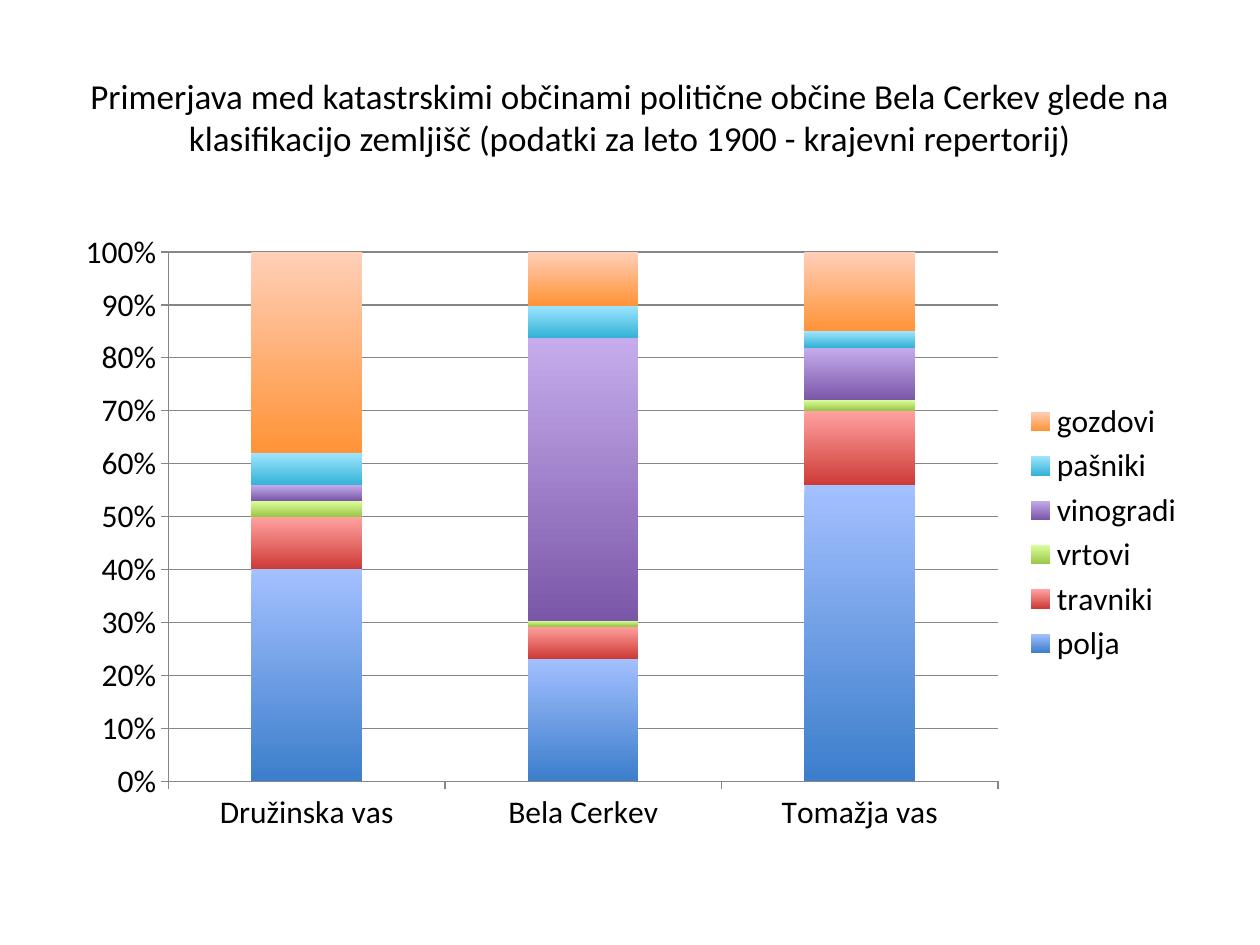
from pptx import Presentation
from pptx.chart.data import CategoryChartData
from pptx.dml.color import RGBColor
from pptx.enum.chart import XL_CHART_TYPE, XL_LEGEND_POSITION, XL_TICK_MARK
from pptx.enum.text import MSO_ANCHOR, PP_ALIGN
from pptx.util import Inches, Pt

STACKED = XL_CHART_TYPE.COLUMN_STACKED_100
LEGEND_RIGHT = XL_LEGEND_POSITION.RIGHT
TICK_OUTSIDE = XL_TICK_MARK.OUTSIDE
TICK_NONE = XL_TICK_MARK.NONE
MIDDLE = MSO_ANCHOR.MIDDLE
CENTER = PP_ALIGN.CENTER

FONT = "Calibri"
BLACK = RGBColor(0x00, 0x00, 0x00)
GRAY = RGBColor(0x86, 0x86, 0x86)

TITLE = ("Primerjava med katastrskimi občinami politične občine Bela Cerkev glede na "
         "klasifikacijo zemljišč (podatki za leto 1900 - krajevni repertorij)")
VILLAGES = ["Družinska vas", "Bela Cerkev", "Tomažja vas"]

# Land use: name, shares by village, top and bottom gradient colours
LAND_USES = [
    ("polja", (40, 23, 56), RGBColor(0xA3, 0xC0, 0xFF), RGBColor(0x3C, 0x7E, 0xCB)),
    ("travniki", (10, 6, 14), RGBColor(0xFF, 0xA2, 0xA0), RGBColor(0xCE, 0x3B, 0x37)),
    ("vrtovi", (3, 1, 2), RGBColor(0xDB, 0xFF, 0x9C), RGBColor(0x9B, 0xC7, 0x48)),
    ("vinogradi", (3, 53, 10), RGBColor(0xC6, 0xAC, 0xED), RGBColor(0x7B, 0x57, 0xA8)),
    ("pašniki", (6, 6, 3), RGBColor(0x9F, 0xE5, 0xFF), RGBColor(0x34, 0xB3, 0xD6)),
    ("gozdovi", (38, 10, 15), RGBColor(0xFF, 0xCF, 0xB8), RGBColor(0xFF, 0x93, 0x37)),
]


def style_font(font, size):
    font.name = FONT
    font.size = Pt(size)
    font.color.rgb = BLACK


def add_title(slide, left, top, width, height):
    text_frame = slide.shapes.add_textbox(left, top, width, height).text_frame
    text_frame.word_wrap = True
    text_frame.vertical_anchor = MIDDLE
    paragraph = text_frame.paragraphs[0]
    paragraph.alignment = CENTER
    run = paragraph.add_run()
    run.text = TITLE
    style_font(run.font, 20)


def style_axis(axis):
    axis.major_tick_mark = TICK_OUTSIDE
    axis.minor_tick_mark = TICK_NONE
    axis.format.line.color.rgb = GRAY
    style_font(axis.tick_labels.font, 18)


def add_land_use_chart(slide, left, top, width, height):
    chart_data = CategoryChartData()
    chart_data.categories = VILLAGES
    for name, shares, _, _ in LAND_USES:
        chart_data.add_series(name, shares)
    chart = slide.shapes.add_chart(STACKED, left, top, width, height, chart_data).chart
    chart.has_title = False
    style_font(chart.font, 18)

    # Axes and gridlines
    style_axis(chart.category_axis)
    value_axis = chart.value_axis
    style_axis(value_axis)
    value_axis.tick_labels.number_format = "0%"
    value_axis.tick_labels.number_format_is_linked = False
    value_axis.has_major_gridlines = True
    value_axis.major_gridlines.format.line.color.rgb = GRAY

    # Legend
    chart.has_legend = True
    chart.legend.position = LEGEND_RIGHT
    chart.legend.include_in_layout = False
    style_font(chart.legend.font, 18)

    # Columns, each shaded from light at the top to dark at the bottom
    plot = chart.plots[0]
    plot.gap_width = 150
    plot.overlap = 100
    plot.vary_by_categories = False
    for series, (_, _, *colors) in zip(plot.series, LAND_USES):
        fill = series.format.fill
        fill.gradient()
        fill.gradient_angle = 270
        for stop, color in zip(fill.gradient_stops, colors):
            stop.color.rgb = color


def main():
    presentation = Presentation()
    presentation.slide_width = Inches(10)
    presentation.slide_height = Inches(7.5)
    slide = presentation.slides.add_slide(presentation.slide_layouts[6])
    add_title(slide, Inches(0.5), Inches(0.3), Inches(9), Inches(1.25))
    add_land_use_chart(slide, Inches(0.5), Inches(1.75), Inches(9), Inches(4.95))
    presentation.save("out.pptx")


if __name__ == "__main__":
    main()
